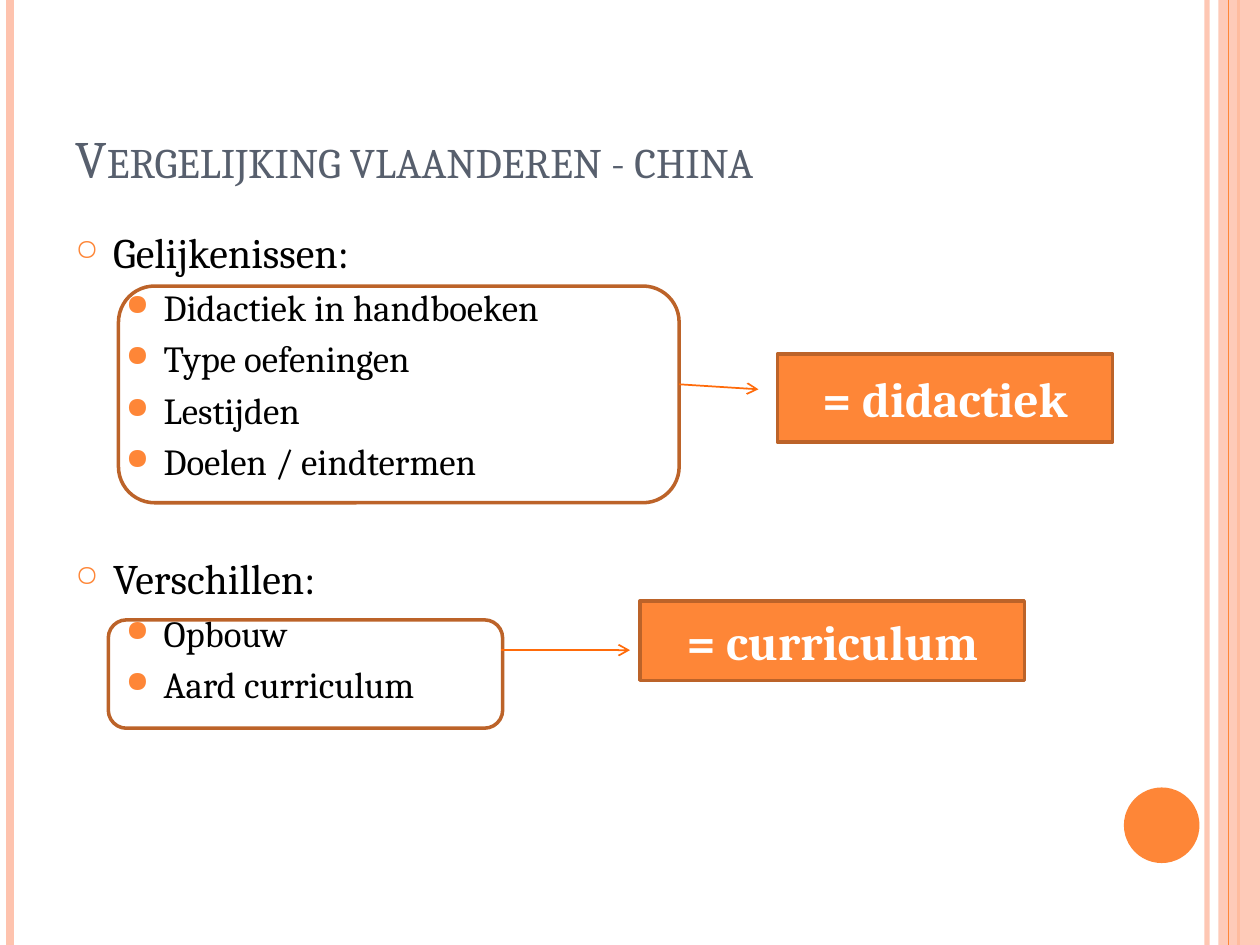
from dataclasses import dataclass

import pptx
import pptx.dml.color
import pptx.enum.shapes
import pptx.enum.text
import pptx.oxml
import pptx.oxml.ns
import pptx.util
from pptx.util import Inches

KIND = pptx.enum.shapes.MSO_SHAPE
ALIGN = pptx.enum.text.PP_ALIGN
ANCHOR = pptx.enum.text.MSO_ANCHOR


@dataclass(frozen=True)
class Theme:
    face: str = "Cambria"
    main: str = "FE8637"
    pale: str = "FEC3AE"
    edge: str = "BC6329"
    arrow: str = "FF6B0A"
    title: str = "575F6D"
    ink: str = "000000"
    white: str = "FFFFFF"
    title_size: int = 30
    head_size: int = 24
    item_size: int = 21
    label_size: int = 28


@dataclass(frozen=True)
class Box:
    left: float
    top: float
    width: float
    height: float
    text: str = ""


@dataclass(frozen=True)
class Line:
    x1: float
    y1: float
    x2: float
    y2: float
    color: str
    weight: float
    alpha: int = 100
    arrow: bool = False


@dataclass(frozen=True)
class Level:
    """Bullet look of one list level; indents in inches, the rest in points or percent."""
    indent: float
    bullet: str
    scale: int
    size: int
    before: float


THEME = Theme()
HEAD = Level(0.3, "○", 70, THEME.head_size, 6)
ITEM = Level(0.7, "●", 80, THEME.item_size, 4.2)
HANG = 0.3
GROUP_GAP = 40

RULES = [
    Line(9.58, 0, 9.58, 7.5, THEME.pale, 3, alpha=93),
    Line(0.08, 0, 0.08, 7.5, THEME.pale, 4.5),
    Line(9.83, 0, 9.83, 7.5, THEME.main, 1.5),
]
BAND = Box(9.67, 0, 0.33, 7.5)
BAND_RULE = Line(9.75, 0, 9.75, 7.5, THEME.main, 0.75)
DOT = Box(8.92, 6.25, 0.6, 0.6)
GROUPS = {
    "Gelijkenissen:": ["Didactiek in handboeken", "Type oefeningen",
                       "Lestijden", "Doelen / eindtermen"],
    "Verschillen:": ["Opbouw", "Aard curriculum"],
}
FRAMES = [Box(0.94, 2.27, 4.45, 1.72), Box(0.86, 4.92, 3.13, 0.86)]
ARROWS = [
    Line(5.39, 3.05, 6.02, 3.09, THEME.arrow, 1, arrow=True),
    Line(3.98, 5.16, 5, 5.16, THEME.arrow, 1, arrow=True),
]
LABELS = [
    Box(6.17, 2.81, 2.66, 0.7, "= didactiek"),
    Box(5.08, 4.77, 3.05, 0.63, "= curriculum"),
]


def rgb(color: str):
    return pptx.dml.color.RGBColor.from_string(color)


def add_node(parent, tag: str, **attrs):
    node = pptx.oxml.ns.qn(tag)
    child = parent.makeelement(node, attrs)
    parent.append(child)
    return child


def paint(fill, color: str, alpha: int = 100) -> None:
    fill.solid()
    fill.fore_color.rgb = rgb(color)
    if alpha < 100:
        tone = fill._xPr.find(".//" + pptx.oxml.ns.qn("a:srgbClr"))
        add_node(tone, "a:alpha", val=str(alpha * 1000))


def set_font(par, size: int, color: str, bold: bool = False) -> None:
    font = par.font
    font.name, font.size, font.bold = THEME.face, pptx.util.Pt(size), bold
    font.color.rgb = rgb(color)


def place(box: Box):
    return [Inches(v) for v in (box.left, box.top, box.width, box.height)]


def draw_line(slide, line: Line) -> None:
    ends = [Inches(v) for v in (line.x1, line.y1, line.x2, line.y2)]
    link = slide.shapes.add_connector(pptx.enum.shapes.MSO_CONNECTOR.STRAIGHT, *ends)
    link.line.width = pptx.util.Pt(line.weight)
    paint(link.line.fill, line.color, line.alpha)
    if line.arrow:
        add_node(link.line._get_or_add_ln(), "a:tailEnd", type="arrow")
    add_node(link._element.spPr, "a:effectLst")


def draw_shape(slide, kind, box: Box, fill: str = "", edge: str = "", alpha: int = 100):
    shape = slide.shapes.add_shape(kind, *place(box))
    shape.shadow.inherit = False
    if fill:
        paint(shape.fill, fill, alpha)
    else:
        shape.fill.background()
    if edge:
        paint(shape.line.fill, edge)
        shape.line.width = pptx.util.Pt(2)
    else:
        shape.line.fill.background()
    return shape


def draw_label(slide, box: Box) -> None:
    frame = draw_shape(slide, KIND.RECTANGLE, box, THEME.main, THEME.edge).text_frame
    frame.vertical_anchor = ANCHOR.MIDDLE
    par = frame.paragraphs[0]
    par.text, par.alignment = box.text, ALIGN.CENTER
    set_font(par, THEME.label_size, THEME.white, bold=True)


def draw_title(slide, box: Box) -> None:
    title = slide.shapes.title
    title.left, title.top, title.width, title.height = place(box)
    frame = title.text_frame
    frame.auto_size = pptx.enum.text.MSO_AUTO_SIZE.NONE
    frame.vertical_anchor = ANCHOR.BOTTOM
    par = frame.paragraphs[0]
    par.text, par.alignment = box.text, ALIGN.LEFT
    set_font(par, THEME.title_size, THEME.title)
    par.font._element.set("cap", "small")


def write_item(par, text: str, level: Level, before: float) -> None:
    par.text = text
    par.space_before = pptx.util.Pt(before)
    props = par._p.get_or_add_pPr()
    props.set("marL", str(Inches(level.indent)))
    props.set("indent", str(-Inches(HANG)))
    add_node(add_node(props, "a:buClr"), "a:srgbClr", val=THEME.main)
    add_node(props, "a:buSzPct", val=str(level.scale * 1000))
    add_node(props, "a:buChar", char=level.bullet)
    set_font(par, level.size, THEME.ink)


def draw_list(slide, box: Box) -> None:
    frame = slide.shapes.add_textbox(*place(box)).text_frame
    frame.word_wrap = True
    par = frame.paragraphs[0]
    for rank, (head, items) in enumerate(GROUPS.items()):
        if rank:
            par = frame.add_paragraph()
        write_item(par, head, HEAD, GROUP_GAP if rank else HEAD.before)
        for item in items:
            write_item(frame.add_paragraph(), item, ITEM, ITEM.before)


def main() -> None:
    deck = pptx.Presentation()
    deck.slide_width, deck.slide_height = Inches(10), Inches(7.5)
    slide = deck.slides.add_slide(deck.slide_layouts[5])
    for rule in RULES:
        draw_line(slide, rule)
    draw_shape(slide, KIND.RECTANGLE, BAND, THEME.pale, alpha=87)
    draw_line(slide, BAND_RULE)
    draw_shape(slide, KIND.OVAL, DOT, THEME.main)
    draw_title(slide, Box(0.5, 0.3, 8.17, 1.25, "Vergelijking vlaanderen - china"))
    draw_list(slide, Box(0.5, 1.75, 8.17, 5.33))
    for frame in FRAMES:
        draw_shape(slide, KIND.ROUNDED_RECTANGLE, frame, edge=THEME.edge)
    for arrow in ARROWS:
        draw_line(slide, arrow)
    for label in LABELS:
        draw_label(slide, label)
    deck.save("out.pptx")


if __name__ == "__main__":
    main()
